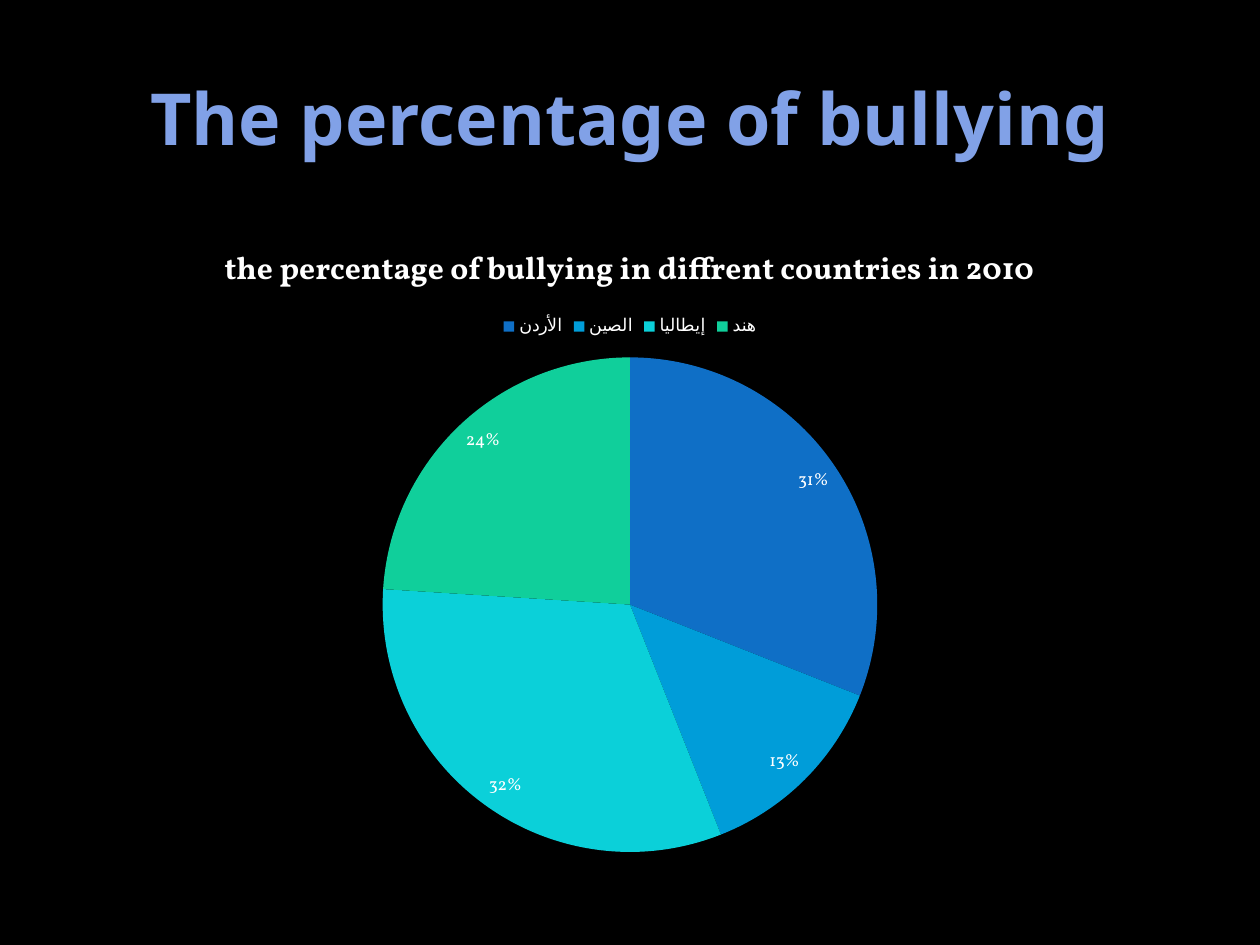
from pptx import Presentation
from pptx.chart.data import CategoryChartData
from pptx.dml.color import RGBColor
from pptx.enum.chart import XL_CHART_TYPE as ChartType
from pptx.enum.chart import XL_LABEL_POSITION as LabelPosition
from pptx.enum.chart import XL_LEGEND_POSITION as LegendPosition
from pptx.enum.text import MSO_ANCHOR as Anchor
from pptx.enum.text import PP_ALIGN as Align
from pptx.util import Inches, Pt

COLORS = {
    "background": "000000",
    "text": "FFFFFF",
    "heading": "81A1E7",
    "heading_end": "638FE5",
}
# Share of bullying and slice colour by country
COUNTRIES = {
    "الأردن": (31, "0F6FC6"),
    "الصين": (13, "009DD9"),
    "إيطاليا": (32, "0BD0D9"),
    "هند": (24, "10CF9B"),
}
HEADING_FONT = {"name": "Noto Sans", "size": Pt(41), "bold": True}
CHART_FONT = {"name": "Vollkorn", "size": Pt(10), "bold": False}
CHART_TITLE_FONT = {"name": "Vollkorn", "size": Pt(18), "bold": True}


def rgb(value):
    return RGBColor.from_string(value)


def format_font(font, values):
    for attribute, value in values.items():
        setattr(font, attribute, value)


def place_heading(slide, left, top, width, height):
    heading = slide.shapes.title
    box = {"left": left, "top": top, "width": width, "height": height}
    for side, length in box.items():
        setattr(heading, side, length)
    frame = heading.text_frame
    frame.text = "The percentage of bullying"
    frame.vertical_anchor = Anchor.MIDDLE
    frame.paragraphs[0].alignment = Align.CENTER
    font = frame.paragraphs[0].runs[0].font
    format_font(font, HEADING_FONT)

    # Flat colour for most of the height, then a slightly deeper blue
    font.fill.gradient()
    font.fill.gradient_angle = 280
    stops = (("heading", 0.73), ("heading_end", 1))
    for stop, (color, position) in zip(font.fill.gradient_stops, stops):
        stop.color.rgb = rgb(COLORS[color])
        stop.position = position


def place_country_pie(slide, left, top, width, height):
    shares = CategoryChartData()
    shares.categories = COUNTRIES.keys()
    shares.add_series("Series 1", [share for share, _ in COUNTRIES.values()])
    chart = slide.shapes.add_chart(
        ChartType.PIE, left, top, width, height, shares).chart
    format_font(chart.font, CHART_FONT)
    chart.font.color.rgb = rgb(COLORS["text"])

    # Chart title
    chart.has_title = True
    title_frame = chart.chart_title.text_frame
    title_frame.text = "the percentage of bullying in diffrent countries in 2010"
    title_font = title_frame.paragraphs[0].runs[0].font
    format_font(title_font, CHART_TITLE_FONT)
    title_font.color.rgb = rgb(COLORS["text"])

    # Legend
    chart.has_legend = True
    chart.legend.position = LegendPosition.TOP
    chart.legend.include_in_layout = False

    # Slices and their percentages
    pie = chart.plots[0]
    pie.vary_by_categories = True
    for index, (_, color) in enumerate(COUNTRIES.values()):
        fill = pie.series[0].points[index].format.fill
        fill.solid()
        fill.fore_color.rgb = rgb(color)
    pie.has_data_labels = True
    label_format = {
        "show_percentage": True,
        "show_value": False,
        "number_format": "0%",
        "number_format_is_linked": False,
        "position": LabelPosition.INSIDE_END,
    }
    for attribute, value in label_format.items():
        setattr(pie.data_labels, attribute, value)


def main():
    deck = Presentation()
    deck.slide_width, deck.slide_height = Inches(10), Inches(7.5)
    slide = deck.slides.add_slide(deck.slide_layouts[5])
    slide.background.fill.solid()
    slide.background.fill.fore_color.rgb = rgb(COLORS["background"])

    margin, content_width = Inches(0.5), Inches(9)
    place_heading(slide, margin, Inches(0.3), content_width, Inches(1.25))
    place_country_pie(slide, margin, Inches(1.75), content_width, Inches(5.15))
    deck.save("out.pptx")


if __name__ == "__main__":
    main()
